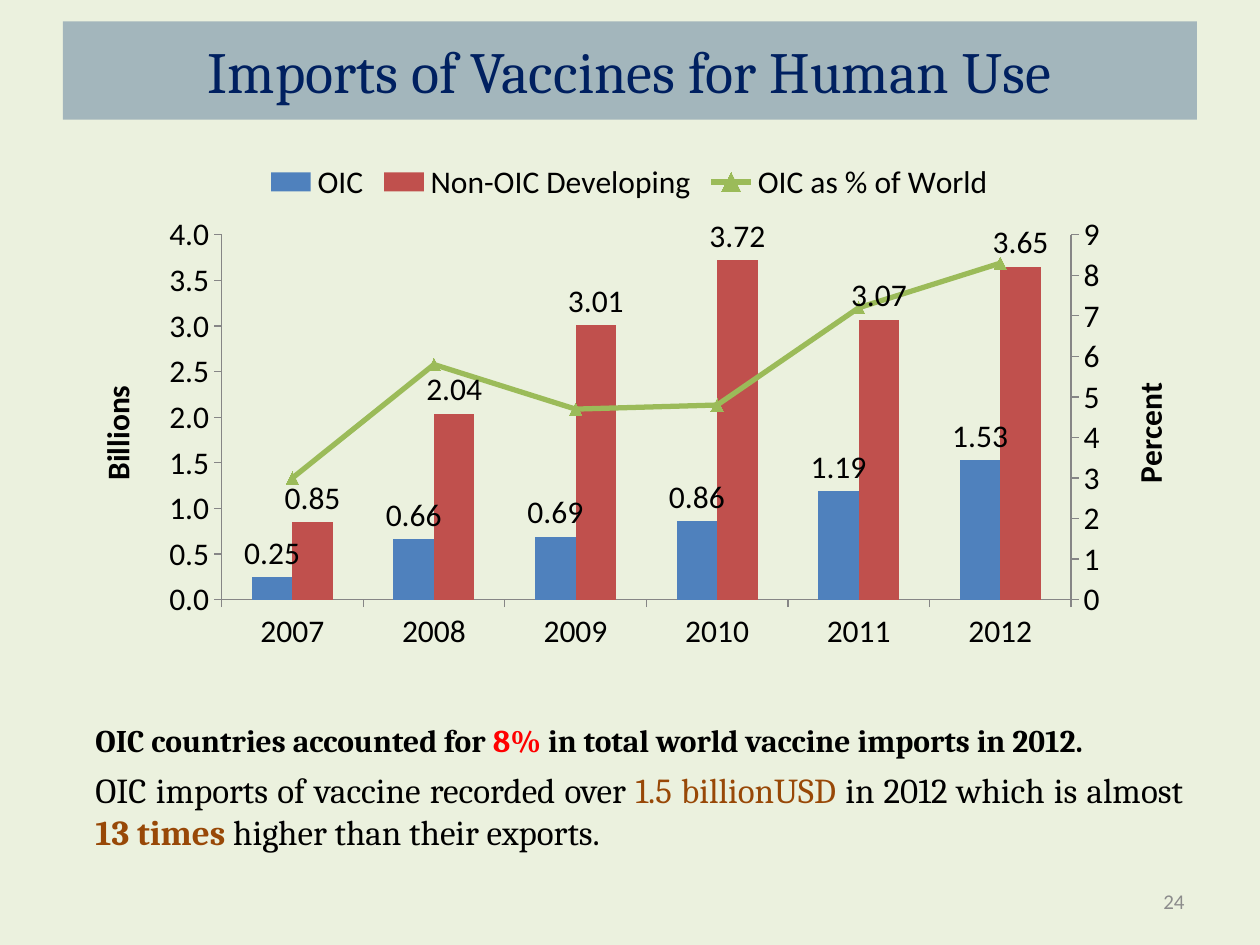
from copy import deepcopy
from dataclasses import dataclass

from lxml import etree
from pptx import Presentation, util as u
from pptx.chart.axis import ValueAxis
from pptx.chart.data import CategoryChartData
from pptx.dml.color import RGBColor
from pptx.enum import chart as ch, shapes, text
from pptx.oxml import parse_xml
from pptx.oxml.ns import qn


@dataclass(frozen=True)
class Theme:
    bg: str = "EBF1DE"
    band: str = "1F497D"
    title: str = "002060"
    ink: str = "000000"
    red: str = "FF0000"
    brown: str = "984807"
    grey: str = "8C8C8C"
    axis: str = "868686"
    line: str = "9BBB59"
    bars: tuple = ("4F81BD", "C0504D")
    head: str = "Cambria"
    body: str = "Calibri"
    title_pt: float = 33.3
    chart_pt: int = 18
    number_pt: int = 12


T = Theme()
TITLE = "Imports of Vaccines for Human Use"
PAGE = "24"
YEARS = ["2007", "2008", "2009", "2010", "2011", "2012"]
SERIES = [
    ("OIC", [0.25, 0.66, 0.69, 0.86, 1.19, 1.53]),
    ("Non-OIC Developing", [0.85, 2.04, 3.01, 3.72, 3.07, 3.65]),
    ("OIC as % of World", [3, 5.8, 4.7, 4.8, 7.2, 8.3]),
]
# One entry a paragraph: size, then runs of (text, colour, bold)
NOTES = [
    (18, [("OIC countries accounted for ", T.ink, True),
          ("8% ", T.red, True),
          ("in total world vaccine imports in 2012. ", T.ink, True)]),
    (20, [("OIC imports of vaccine recorded over ", T.ink, False),
          ("1.5 billionUSD ", T.brown, False),
          ("in 2012 which is almost ", T.ink, False),
          ("13 times ", T.brown, True),
          ("higher than their exports.", T.ink, False)]),
]
PLOT_AREA = {"x": 0.14, "y": 0.17, "w": 0.75, "h": 0.71}


def rgb(value):
    return RGBColor.from_string(value)


def set_font(font, size, color, name, bold=False):
    font.size, font.name, font.bold = u.Pt(size), name, bold
    font.color.rgb = rgb(color)


def add_run(p, words, *style):
    r = p.add_run()
    r.text = words
    set_font(r.font, *style)


def add_text_box(s, *box):
    tf = s.shapes.add_textbox(*map(u.Inches, box)).text_frame
    tf.word_wrap = True
    return tf


def add_title(s):
    sp = s.shapes.add_shape(shapes.MSO_SHAPE.RECTANGLE,
                            *map(u.Inches, (0.5, 0.17, 9, 0.78)))
    sp.shadow.inherit = False
    sp.line.fill.background()
    sp.fill.solid()
    sp.fill.fore_color.rgb = rgb(T.band)
    color = sp._element.spPr.find(".//" + qn("a:srgbClr"))
    etree.SubElement(color, qn("a:alpha"), val="35000")
    tf = sp.text_frame
    tf.vertical_anchor = text.MSO_ANCHOR.MIDDLE
    p = tf.paragraphs[0]
    p.alignment = text.PP_ALIGN.CENTER
    add_run(p, TITLE, T.title_pt, T.title, T.head)


def style_axis(axis):
    axis.has_major_gridlines = False
    axis.major_tick_mark = ch.XL_TICK_MARK.OUTSIDE
    axis.minor_tick_mark = ch.XL_TICK_MARK.NONE
    axis.format.line.color.rgb = rgb(T.axis)


def style_value_axis(element, title, top, step, number_format):
    axis = ValueAxis(element)
    style_axis(axis)
    axis.minimum_scale, axis.maximum_scale, axis.major_unit = 0, top, step
    axis.tick_labels.number_format = number_format
    axis.tick_labels.number_format_is_linked = False
    p = axis.axis_title.text_frame.paragraphs[0]
    add_run(p, title, T.chart_pt, T.ink, T.body, True)
    body = element.find(qn("c:title")).find(".//" + qn("a:bodyPr"))
    body.set("rot", "-5400000")
    body.set("vert", "horz")


def move_last_series_to_right_axis(plot_area):
    """Turn the last bar series into a line on its own axes; return both value axes."""
    bar = plot_area.find(qn("c:barChart"))
    ser = bar.findall(qn("c:ser"))[-1]
    for bar_only in ser.findall(qn("c:invertIfNegative")):
        ser.remove(bar_only)
    line = parse_xml(
        '<c:lineChart xmlns:c="http://schemas.openxmlformats.org/drawingml/2006/chart">'
        '<c:grouping val="standard"/><c:varyColors val="0"/><c:marker val="1"/>'
        '<c:axId val="5001"/><c:axId val="5002"/></c:lineChart>')
    line.insert(2, ser)
    bar.addnext(line)

    cat, left = plot_area.find(qn("c:catAx")), plot_area.find(qn("c:valAx"))
    hidden, right = deepcopy(cat), deepcopy(left)
    left.addnext(hidden)
    hidden.addnext(right)
    for axis, own, other in ((hidden, "5001", "5002"), (right, "5002", "5001")):
        axis.find(qn("c:axId")).set("val", own)
        axis.find(qn("c:crossAx")).set("val", other)
    hidden.find(qn("c:delete")).set("val", "1")
    right.find(qn("c:axPos")).set("val", "r")
    right.find(qn("c:crosses")).set("val", "max")
    return left, right


def fix_plot_area(plot_area):
    for old in plot_area.findall(qn("c:layout")):
        plot_area.remove(old)
    layout = etree.Element(qn("c:layout"))
    manual = etree.SubElement(layout, qn("c:manualLayout"))
    settings = {"layoutTarget": "inner", "xMode": "edge", "yMode": "edge", **PLOT_AREA}
    for tag, value in settings.items():
        etree.SubElement(manual, qn("c:" + tag), val=str(value))
    plot_area.insert(0, layout)


def add_imports_chart(s):
    data = CategoryChartData()
    data.categories = YEARS
    for name, values in SERIES:
        data.add_series(name, values)
    chart = s.shapes.add_chart(ch.XL_CHART_TYPE.COLUMN_CLUSTERED,
                               *map(u.Inches, (0.5, 1.17, 8.99, 4.08)), data).chart
    set_font(chart.font, T.chart_pt, T.ink, T.body)
    chart.has_title = False
    chart.has_legend = True
    chart.legend.position = ch.XL_LEGEND_POSITION.TOP
    chart.legend.include_in_layout = False

    plot_area = chart._chartSpace.find(".//" + qn("c:plotArea"))
    left, right = move_last_series_to_right_axis(plot_area)
    fix_plot_area(plot_area)
    style_axis(chart.category_axis)
    style_value_axis(left, "Billions", 4, 0.5, "#,##0.0")
    style_value_axis(right, "Percent", 9, 1, "0")

    bars, lines = chart.plots
    bars.gap_width, bars.overlap, bars.vary_by_categories = 150, 0, False
    for ser, color in zip(bars.series, T.bars):
        ser.format.fill.solid()
        ser.format.fill.fore_color.rgb = rgb(color)
        ser.data_labels.show_value = True
        ser.data_labels.position = ch.XL_LABEL_POSITION.OUTSIDE_END
    share = lines.series[0]
    share.smooth = False
    share.format.line.color.rgb = rgb(T.line)
    share.format.line.width = u.Pt(3)
    share.marker.style = ch.XL_MARKER_STYLE.TRIANGLE
    share.marker.size = 7
    share.marker.format.fill.solid()
    share.marker.format.fill.fore_color.rgb = rgb(T.line)
    share.marker.format.line.color.rgb = rgb(T.line)


def add_notes_text(s):
    tf = add_text_box(s, 0.66, 5.67, 8.83, 1.16)
    for i, (size, runs) in enumerate(NOTES):
        p = tf.add_paragraph() if i else tf.paragraphs[0]
        p.alignment = text.PP_ALIGN.JUSTIFY
        p.space_after = u.Pt(6)
        for words, color, bold in runs:
            add_run(p, words, size, color, T.head, bold)


def add_page_number(s):
    tf = add_text_box(s, 7.17, 6.95, 2.33, 0.4)
    tf.vertical_anchor = text.MSO_ANCHOR.MIDDLE
    p = tf.paragraphs[0]
    p.alignment = text.PP_ALIGN.RIGHT
    add_run(p, PAGE, T.number_pt, T.grey, T.body)


def main():
    prs = Presentation()
    prs.slide_width, prs.slide_height = u.Inches(10), u.Inches(7.5)
    s = prs.slides.add_slide(prs.slide_layouts[6])
    s.background.fill.solid()
    s.background.fill.fore_color.rgb = rgb(T.bg)
    for add in (add_title, add_page_number, add_notes_text, add_imports_chart):
        add(s)
    prs.save("out.pptx")


if __name__ == "__main__":
    main()
